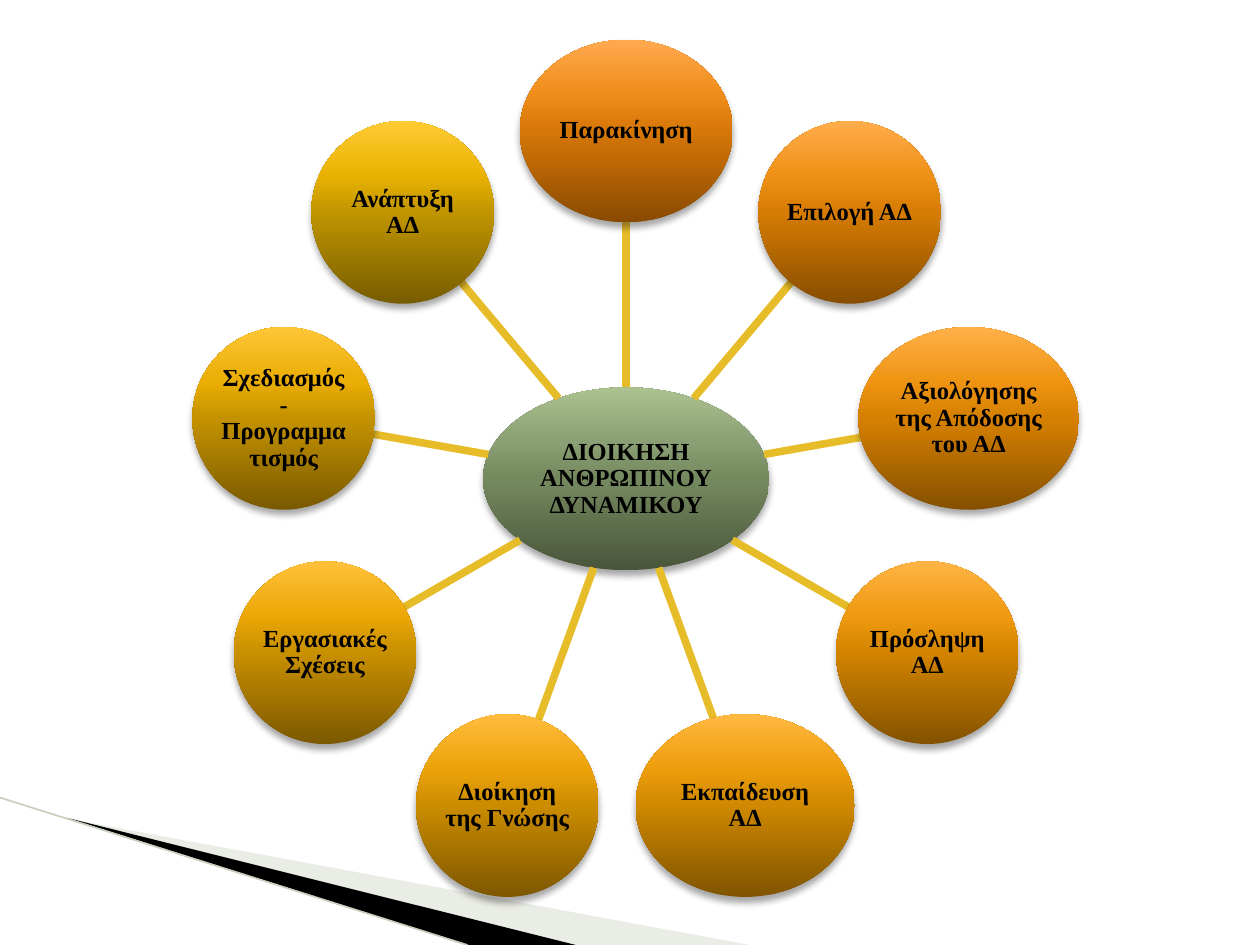
from math import cos, hypot, radians, sin

from lxml.etree import SubElement
from pptx import Presentation
from pptx.dml.color import RGBColor
from pptx.enum.shapes import MSO_CONNECTOR, MSO_SHAPE
from pptx.enum.text import MSO_ANCHOR, PP_ALIGN
from pptx.oxml.ns import qn
from pptx.util import Inches, Pt

BLACK = RGBColor(0x00, 0x00, 0x00)
SPOKE = RGBColor(0xE7, 0xBC, 0x29)
PALE_GREEN = RGBColor(0xCB, 0xD4, 0xC0)
EDGE_GREEN = RGBColor(0xC6, 0xD0, 0xBB)


def shades(*codes):
    return [RGBColor.from_string(code) for code in codes]


HUB_SHADES = shades("49553A", "75895F", "8A9F73", "ABC290")
STOP_POSITIONS = (0, 50, 70, 100)

CENTER_X, CENTER_Y = 4.97, 3.8
ORBIT = 2.76
HUB_WIDTH = 2.27
HEIGHT = 1.45

# Clockwise from the top: text, width, shades from bottom to top
NODES = [
    ("Παρακίνηση", 1.69, shades("894A01", "D67708", "F08C19", "FFAA50")),
    ("Επιλογή ΑΔ", 1.45, shades("874D00", "D67C04", "EF9016", "FFAD4C")),
    ("Αξιολόγησης της Απόδοσης του ΑΔ", 1.75,
     shades("855000", "D68001", "EE9412", "FFB049")),
    ("Πρόσληψη ΑΔ", 1.45, shades("835200", "D38400", "EE990F", "FFB445")),
    ("Εκπαίδευση ΑΔ", 1.74, shades("805400", "CF8800", "ED9E0C", "FFB841")),
    ("Διοίκηση της Γνώσης", 1.45, shades("7E5700", "CB8C00", "ECA309", "FFBC3E")),
    ("Εργασιακές Σχέσεις", 1.45, shades("7C5900", "C88F00", "EBA806", "FFC13A")),
    ("Σχεδιασμός - Προγραμματισμός", 1.45,
     shades("7A5A00", "C49200", "EAAD04", "FFC637")),
    ("Ανάπτυξη ΑΔ", 1.45, shades("775C00", "C09500", "E9B201", "FFCB34")),
]


def add_color(parent, color, alpha=None):
    element = SubElement(parent, qn("a:srgbClr"), val=str(color))
    if alpha is not None:
        SubElement(element, qn("a:alpha"), val=str(alpha * 1000))


def write_text(frame, text, *, font="Times New Roman", size=14, bold=True,
               color=BLACK, align=PP_ALIGN.CENTER, spacing=0.9):
    frame.word_wrap = True
    frame.vertical_anchor = MSO_ANCHOR.MIDDLE
    frame.margin_left = frame.margin_right = Inches(0.01)
    frame.margin_top = frame.margin_bottom = Inches(0.01)
    para = frame.paragraphs[0]
    para.alignment = align
    para.line_spacing = spacing
    span = para.add_run()
    span.text = text
    span.font.name = font
    span.font.size = Pt(size)
    span.font.bold = bold
    span.font.color.rgb = color


def edge_distance(width, angle):
    """Distance from an ellipse's centre to its edge, angle clockwise from the top."""
    return 1 / hypot(sin(angle) / (width / 2), cos(angle) / (HEIGHT / 2))


def orbit_point(distance, angle):
    return CENTER_X + distance * sin(angle), CENTER_Y - distance * cos(angle)


class Painter:
    def __init__(self, page):
        self.page = page

    def bubble(self, center, width, text, colors):
        x, y = center
        shape = self.page.shapes.add_shape(
            MSO_SHAPE.OVAL, Inches(x - width / 2), Inches(y - HEIGHT / 2),
            Inches(width), Inches(HEIGHT))
        shape.line.fill.background()
        shape.fill.gradient()
        shape.fill.gradient_angle = 90
        stops = shape._element.spPr.find(qn("a:gradFill")).find(qn("a:gsLst"))
        for stop in list(stops):
            stops.remove(stop)
        for position, color in zip(STOP_POSITIONS, colors):
            add_color(SubElement(stops, qn("a:gs"), pos=str(position * 1000)), color)
        self.soft_shadow(shape)
        write_text(shape.text_frame, text)

    def soft_shadow(self, shape):
        shape.shadow.inherit = False
        effects = shape._element.spPr.find(qn("a:effectLst"))
        shadow = SubElement(effects, qn("a:outerShdw"), blurRad=str(Pt(4)),
                            dist=str(Pt(3)), dir="5400000", rotWithShape="0")
        add_color(shadow, BLACK, alpha=35)

    def line(self, start, end, color, width):
        connector = self.page.shapes.add_connector(
            MSO_CONNECTOR.STRAIGHT, *(Inches(value) for value in (*start, *end)))
        connector.line.color.rgb = color
        connector.line.width = Pt(width)
        SubElement(connector._element.spPr, qn("a:effectLst"))

    def wedge(self, points, color, alpha=None):
        first, *rest = [(Inches(x), Inches(y)) for x, y in points]
        builder = self.page.shapes.build_freeform(*first)
        builder.add_line_segments(rest, close=True)
        shape = builder.convert_to_shape()
        shape.fill.solid()
        shape.fill.fore_color.rgb = color
        shape.line.fill.background()
        shape.shadow.inherit = False
        if alpha is not None:
            tint = shape._element.spPr.find(qn("a:solidFill"))[0]
            SubElement(tint, qn("a:alpha"), val=str(alpha * 1000))


def main():
    deck = Presentation()
    deck.slide_width, deck.slide_height = Inches(10), Inches(7.5)
    painter = Painter(deck.slides.add_slide(deck.slide_layouts[6]))

    painter.wedge([(0.55, 6.5), (5.95, 7.5), (4.56, 7.5)], PALE_GREEN, alpha=40)
    painter.wedge([(0.53, 6.49), (4.57, 7.5), (3.72, 7.5)], BLACK)
    painter.line((0, 6.33), (3.71, 7.5), EDGE_GREEN, 0.95)

    painter.bubble((CENTER_X, CENTER_Y), HUB_WIDTH,
                   "ΔΙΟΙΚΗΣΗ ΑΝΘΡΩΠΙΝΟΥ ΔΥΝΑΜΙΚΟΥ", HUB_SHADES)
    for index, (text, width, colors) in enumerate(NODES):
        angle = radians(index * 360 / len(NODES))
        painter.line(orbit_point(edge_distance(HUB_WIDTH, angle), angle),
                     orbit_point(ORBIT - edge_distance(width, angle), angle),
                     SPOKE, 4.33)
        painter.bubble(orbit_point(ORBIT, angle), width, text, colors)

    deck.save("out.pptx")


if __name__ == "__main__":
    main()
